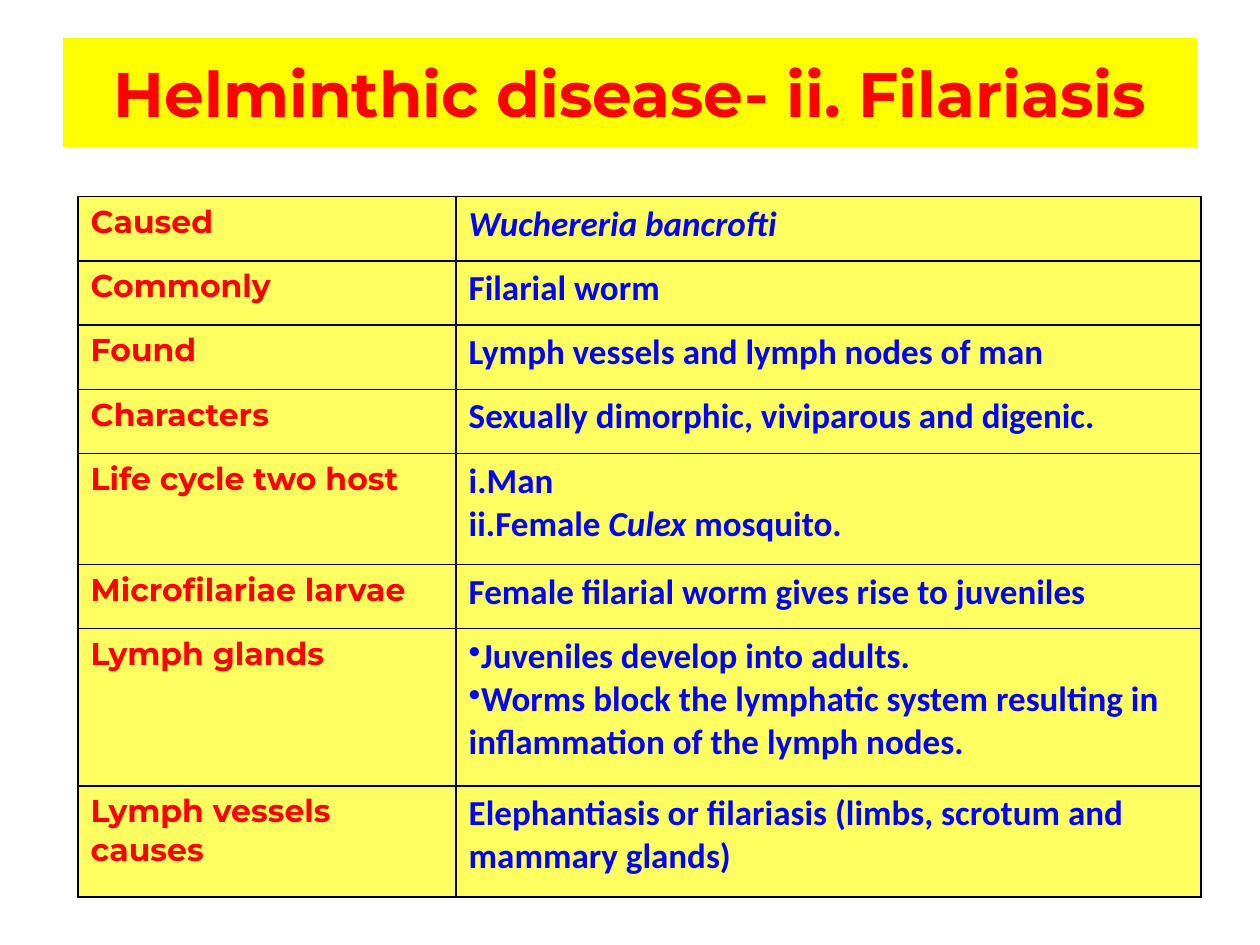
from dataclasses import dataclass

import pptx
import pptx.dml.color
import pptx.enum.text
import pptx.oxml
import pptx.oxml.ns
import pptx.util
from pptx.util import Inches


@dataclass(frozen=True)
class Theme:
    red: str = "FF0000"
    blue: str = "0000FF"
    yellow: str = "FFFF00"
    line: str = "000000"
    alpha: int = 62
    head: str = "Montserrat"
    body: str = "Calibri"
    title: int = 36
    label: int = 18
    text: int = 20


THEME = Theme()
COLS = [3, 5.91]
# Label, row height, paragraphs; *stars* mark italics, a leading • marks a bullet.
ROWS = [
    ("Caused", 0.51, ["*Wuchereria bancrofti*"]),
    ("Commonly", 0.51, ["Filarial worm"]),
    ("Found", 0.51, ["Lymph vessels and lymph nodes of man"]),
    ("Characters", 0.51, ["Sexually dimorphic, viviparous and digenic."]),
    ("Life cycle two host", 0.88, ["i.Man", "ii.Female *Culex* mosquito."]),
    ("Microfilariae larvae", 0.51, ["Female filarial worm gives rise to juveniles"]),
    ("Lymph glands", 1.25, [
        "•Juveniles develop into adults.",
        "•Worms block the lymphatic system resulting in inflammation of the lymph nodes.",
    ]),
    ("Lymph vessels causes", 0.88,
     ["Elephantiasis or filariasis (limbs, scrotum and mammary glands)"]),
]


def rgb(color):
    return pptx.dml.color.RGBColor.from_string(color)


def parse(xml):
    space = pptx.oxml.ns.nsdecls("a")
    return pptx.oxml.parse_xml(xml.replace(" ", f" {space} ", 1))


def set_font(font, name, size, color):
    font.name = name
    font.size = pptx.util.Pt(size)
    font.bold = True
    font.color.rgb = rgb(color)


def add_bullet(para):
    props = para._p.get_or_add_pPr()
    props.set("marL", "0")
    props.set("indent", "0")
    props.insert(0, parse('<a:buChar char="•"/>'))


def fill_cell(cell):
    """Give the cell a see-through fill and a thin line on every side."""
    cell.fill.solid()
    cell.fill.fore_color.rgb = rgb(THEME.yellow)
    props = cell._tc.get_or_add_tcPr()
    color = props.find(".//" + pptx.oxml.ns.qn("a:srgbClr"))
    color.append(parse(f'<a:alpha val="{THEME.alpha * 1000}"/>'))
    for spot, side in enumerate("LRTB"):
        props.insert(spot, parse(
            f'<a:ln{side} w="12700"><a:solidFill><a:srgbClr val="{THEME.line}"/>'
            f'</a:solidFill></a:ln{side}>'))


def write_cell(cell, lines, name, size, color):
    frame = cell.text_frame
    for row, line in enumerate(lines):
        para = frame.add_paragraph() if row else frame.paragraphs[0]
        set_font(para.font, name, size, color)
        if line.startswith("•"):
            add_bullet(para)
        for part, text in enumerate(line.removeprefix("•").split("*")):
            if text:
                run = para.add_run()
                run.text = text
                if part % 2:
                    run.font.italic = True
    fill_cell(cell)


def add_title(slide, text):
    title = slide.shapes.title
    title.left, title.top = Inches(0.5), Inches(0.3)
    title.width, title.height = Inches(9), Inches(0.87)
    title.fill.solid()
    title.fill.fore_color.rgb = rgb(THEME.yellow)
    frame = title.text_frame
    frame.text = text
    frame.auto_size = pptx.enum.text.MSO_AUTO_SIZE.NONE
    frame.vertical_anchor = pptx.enum.text.MSO_ANCHOR.MIDDLE
    para = frame.paragraphs[0]
    para.alignment = pptx.enum.text.PP_ALIGN.CENTER
    set_font(para.font, THEME.head, THEME.title, THEME.red)


def add_facts(slide):
    high = sum(height for _, height, _ in ROWS)
    table = slide.shapes.add_table(
        len(ROWS), len(COLS), Inches(0.62), Inches(1.56),
        Inches(sum(COLS)), Inches(high)).table
    table.first_row = False
    table.horz_banding = False
    for column, width in zip(table.columns, COLS):
        column.width = Inches(width)
    for row, (label, height, lines) in zip(table.rows, ROWS):
        row.height = Inches(height)
        left, right = row.cells
        write_cell(left, [label], THEME.head, THEME.label, THEME.red)
        write_cell(right, lines, THEME.body, THEME.text, THEME.blue)


def main():
    deck = pptx.Presentation()
    deck.slide_width, deck.slide_height = Inches(10), Inches(7.5)
    slide = deck.slides.add_slide(deck.slide_layouts[5])
    add_title(slide, "Helminthic disease- ii. Filariasis")
    add_facts(slide)
    deck.save("out.pptx")


if __name__ == "__main__":
    main()
